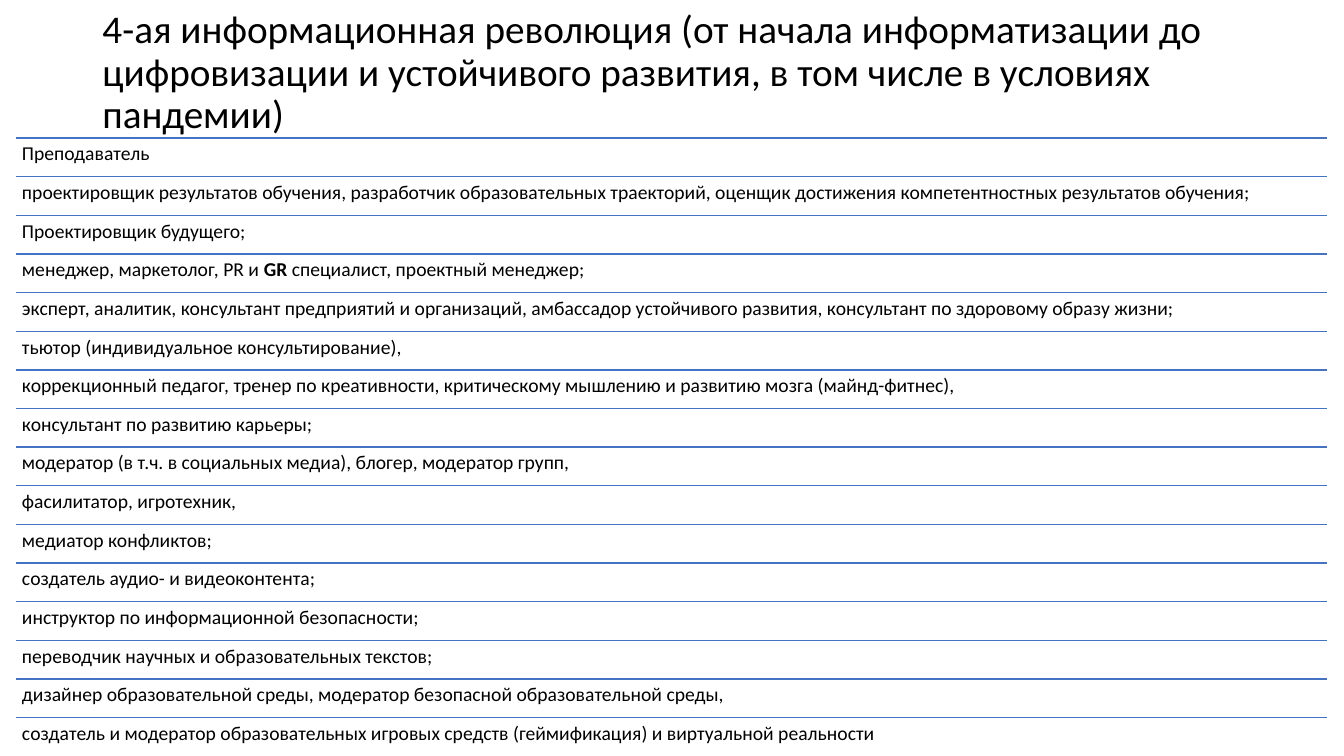
from lxml.etree import SubElement
from pptx import Presentation
from pptx.dml.color import RGBColor
from pptx.enum.shapes import MSO_CONNECTOR as Connector
from pptx.enum.text import MSO_ANCHOR as Anchor, MSO_AUTO_SIZE as AutoSize, PP_ALIGN as Align
from pptx.oxml.ns import qn
from pptx.util import Pt

BLACK = RGBColor(0x00, 0x00, 0x00)
BLUE = RGBColor(0x44, 0x72, 0xC4)

TITLE = (
    "4-ая информационная революция (от начала информатизации до "
    "цифровизации и устойчивого развития, в том числе в условиях пандемии)"
)
# Text between double asterisks is bold.
ROLES = [
    "Преподаватель",
    "проектировщик результатов обучения, разработчик образовательных траекторий, "
    "оценщик достижения компетентностных результатов обучения;",
    "Проектировщик будущего;",
    "менеджер, маркетолог, PR и **GR** специалист, проектный менеджер;",
    "эксперт, аналитик, консультант предприятий и организаций, "
    "амбассадор устойчивого развития, консультант по здоровому образу жизни;",
    "тьютор (индивидуальное консультирование),",
    "коррекционный педагог, тренер по креативности, критическому мышлению "
    "и развитию мозга (майнд-фитнес),",
    "консультант по развитию карьеры;",
    "модератор (в т.ч. в социальных медиа), блогер, модератор групп,",
    "фасилитатор, игротехник,",
    "медиатор конфликтов;",
    "создатель аудио- и видеоконтента;",
    "инструктор по информационной безопасности;",
    "переводчик научных и образовательных текстов;",
    "дизайнер образовательной среды, модератор безопасной образовательной среды,",
    "создатель и модератор образовательных игровых средств (геймификация) "
    "и виртуальной реальности",
]
LIST_LEFT, LIST_TOP, LIST_WIDTH, ROW_HEIGHT = 11.5, 98.6, 936.7, 27.6


class RoleSlide:
    font_name = "Calibri"
    title_size = 28
    text_size = 14
    line_spacing = 0.9
    inset = 4.2

    def __init__(self, page):
        self.page = page

    def style(self, para, size):
        para.alignment = Align.LEFT
        para.line_spacing = self.line_spacing
        para.font.name = self.font_name
        para.font.size = Pt(size)
        para.font.color.rgb = BLACK

    def title(self, text, left, top, width, height):
        box = self.page.shapes.title
        box.left, box.top, box.width, box.height = map(Pt, (left, top, width, height))
        frame = box.text_frame
        frame.text = text
        frame.word_wrap = True
        frame.auto_size = AutoSize.NONE
        frame.vertical_anchor = Anchor.MIDDLE
        self.style(frame.paragraphs[0], self.title_size)

    def rule(self, left, top, width):
        line = self.page.shapes.add_connector(
            Connector.STRAIGHT, Pt(left), Pt(top), Pt(left + width), Pt(top)
        )
        line.line.color.rgb = BLUE
        line.line.width = Pt(1)
        SubElement(line._element.spPr, qn("a:effectLst"))

    def text(self, marked_text, left, top, width, height):
        box = self.page.shapes.add_textbox(Pt(left), Pt(top), Pt(width), Pt(height))
        frame = box.text_frame
        frame.word_wrap = True
        frame.margin_left = frame.margin_right = Pt(self.inset)
        frame.margin_top = frame.margin_bottom = Pt(self.inset)
        para = frame.paragraphs[0]
        self.style(para, self.text_size)
        for index, part in enumerate(marked_text.split("**")):
            span = para.add_run()
            span.text = part
            if index % 2:
                span.font.bold = True


def main():
    deck = Presentation()
    deck.slide_width, deck.slide_height = Pt(960), Pt(540)
    title_only = deck.slide_layouts[5]
    slide = RoleSlide(deck.slides.add_slide(title_only))
    slide.title(TITLE, 66, 28.8, 828, 47.5)
    for index, role in enumerate(ROLES):
        top = LIST_TOP + index * ROW_HEIGHT
        slide.rule(LIST_LEFT, top, LIST_WIDTH)
        slide.text(role, LIST_LEFT, top, LIST_WIDTH, ROW_HEIGHT)
    deck.save("out.pptx")


if __name__ == "__main__":
    main()
